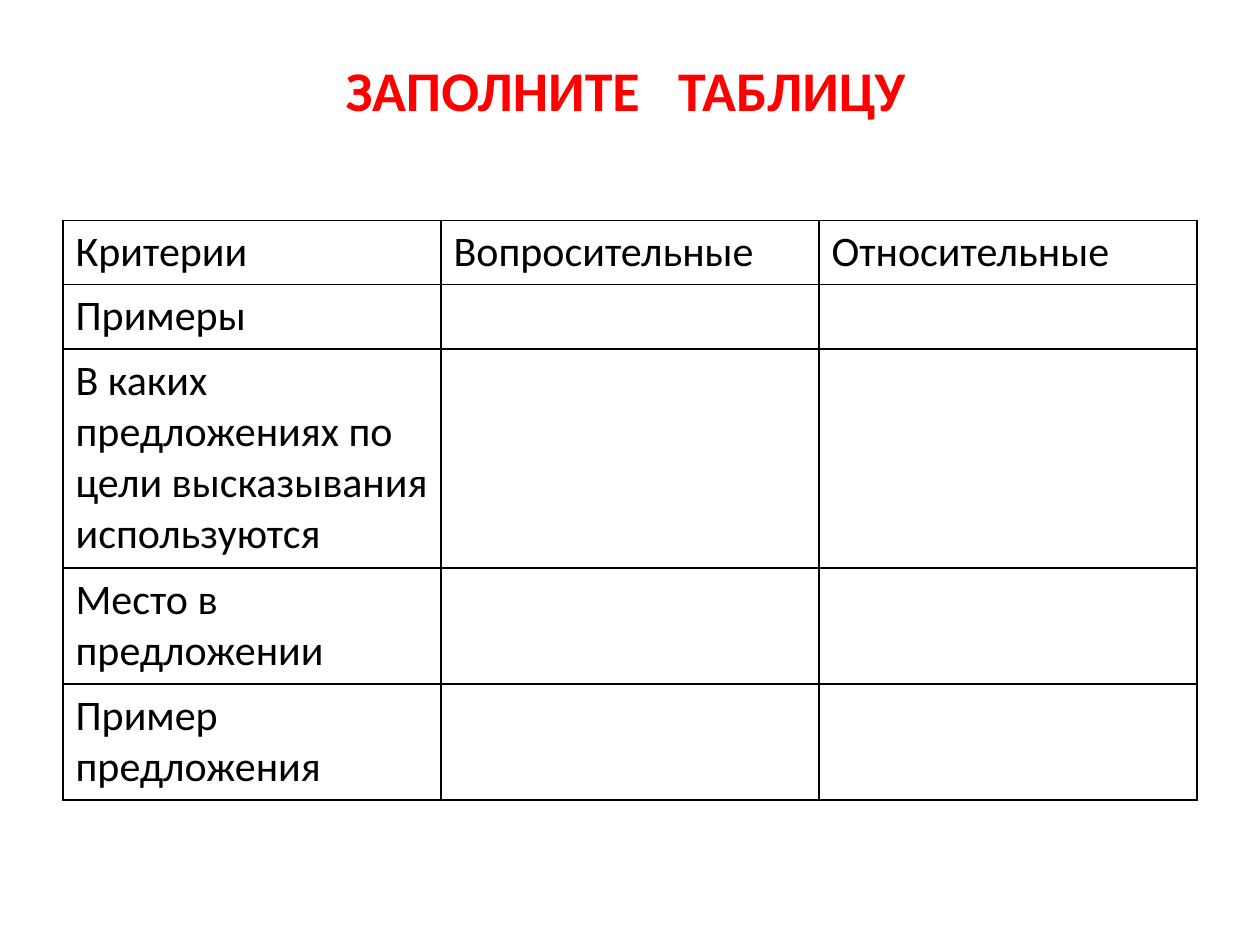
from lxml import etree
from pptx import Presentation
from pptx.dml.color import RGBColor
from pptx.enum import text
from pptx.oxml import ns
from pptx.util import Inches, Pt

TITLE = ("ЗАПОЛНИТЕ", " ", "ТАБЛИЦУ")
HEADS = ("Критерии", "Вопросительные", "Относительные")
ROWS = (
    ("Примеры", 1),
    ("В каких предложениях по цели высказывания используются", 4),
    ("Место в предложении", 2),
    ("Пример предложения", 2),
)
THEME = {
    "font": "Calibri", "title": 32, "cell": 24, "gap": 14.5,
    "red": "FF0000", "ink": "000000", "rule": 1,
}
LEFT, TOP, WIDE = 0.5, 1.75, 3
PAD, LINE = 0.1, 0.41


def style(font, size, color, bold=False):
    font.name = THEME["font"]
    font.size = Pt(size)
    font.bold = bold
    font.color.rgb = RGBColor.from_string(color)


def border(cell):
    props = cell._tc.get_or_add_tcPr()
    for n, side in enumerate(("lnL", "lnR", "lnT", "lnB")):
        line = etree.Element(ns.qn("a:" + side), w=str(Pt(THEME["rule"])))
        fill = etree.SubElement(line, ns.qn("a:solidFill"))
        etree.SubElement(fill, ns.qn("a:srgbClr"), val=THEME["ink"])
        props.insert(n, line)


def add_title(slide):
    box = slide.shapes.title
    box.left, box.top, box.width, box.height = map(Inches, (0.55, 0.39, 8.83, 0.64))
    frame = box.text_frame
    frame.word_wrap = True
    frame.auto_size = text.MSO_AUTO_SIZE.SHAPE_TO_FIT_TEXT
    frame.vertical_anchor = text.MSO_ANCHOR.TOP
    para = frame.paragraphs[0]
    para.alignment = text.PP_ALIGN.CENTER
    for word in TITLE:
        run = para.add_run()
        run.text = word
        style(run.font, THEME["title"], THEME["red"], True)
        if word == " ":
            run._r.get_or_add_rPr().set("spc", str(int(THEME["gap"] * 100)))


def add_grid(slide):
    cells = [HEADS] + [(name, "", "") for name, _ in ROWS]
    highs = [PAD + LINE * n for n in (1, *(n for _, n in ROWS))]
    size = (LEFT, TOP, WIDE * len(HEADS), sum(highs))
    grid = slide.shapes.add_table(len(cells), len(HEADS), *map(Inches, size)).table
    grid.first_row = grid.horz_banding = False
    for col in grid.columns:
        col.width = Inches(WIDE)
    for row, high, words in zip(grid.rows, highs, cells):
        row.height = Inches(high)
        for cell, word in zip(row.cells, words):
            cell.fill.background()
            border(cell)
            if word:
                run = cell.text_frame.paragraphs[0].add_run()
                run.text = word
                style(run.font, THEME["cell"], THEME["ink"])


def main():
    deck = Presentation()
    deck.slide_width, deck.slide_height = Inches(10), Inches(7.5)
    slide = deck.slides.add_slide(deck.slide_layouts[5])
    add_grid(slide)
    add_title(slide)
    deck.save("out.pptx")


if __name__ == "__main__":
    main()
